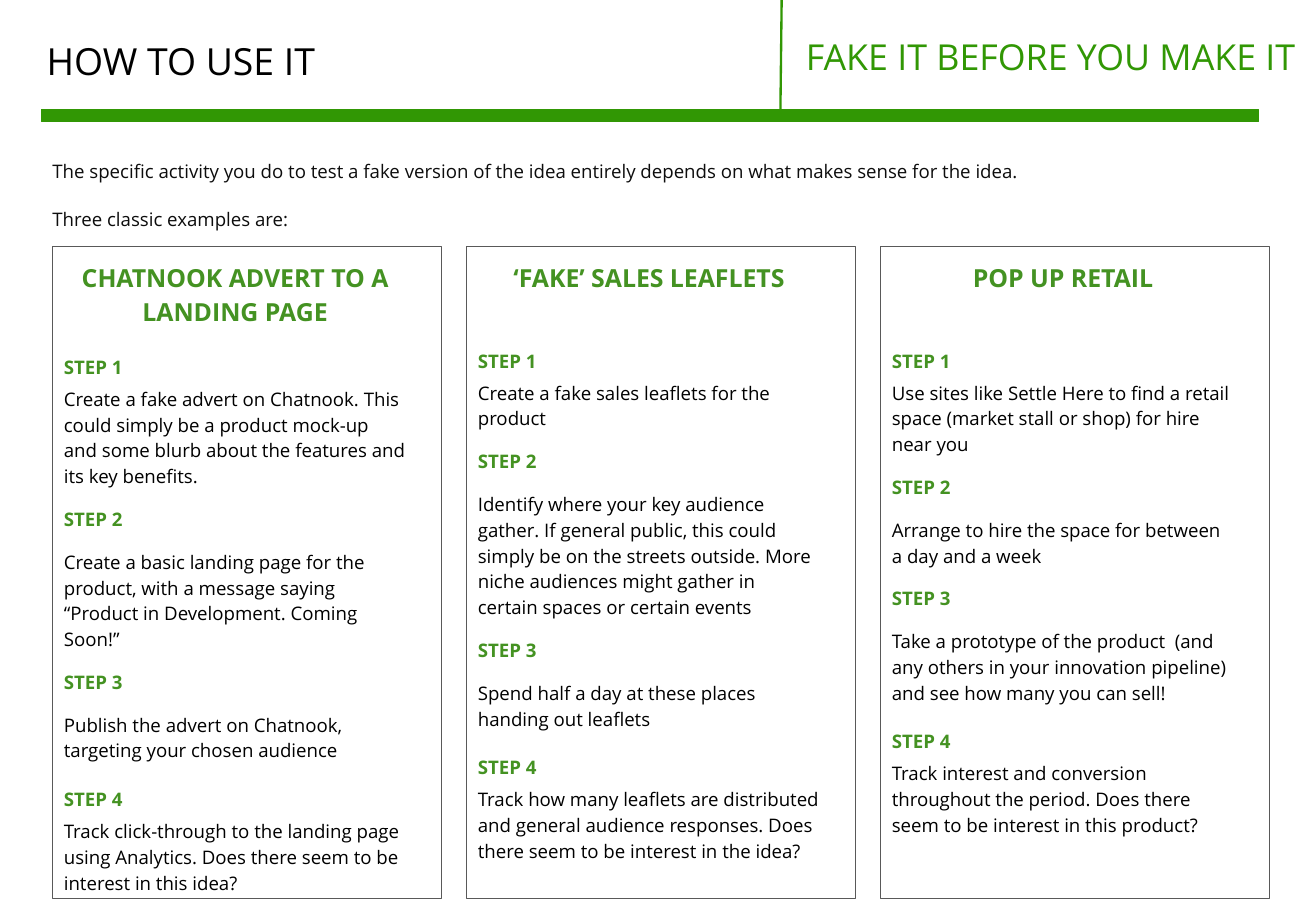
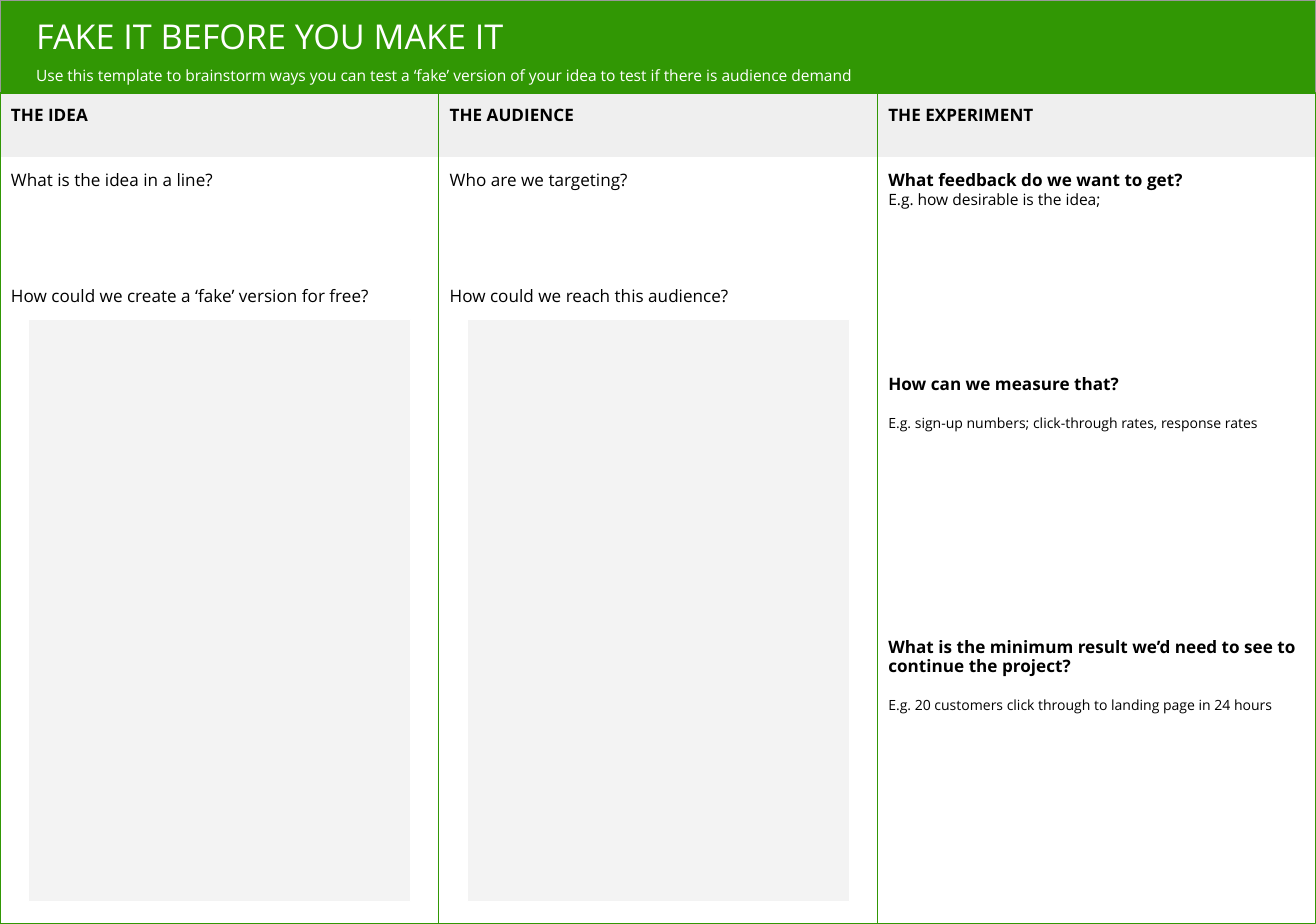
from dataclasses import dataclass

import pptx
import pptx.dml.color
import pptx.enum.shapes
import pptx.enum.text
import pptx.oxml.ns
import pptx.util
from lxml import etree

Cm, Pt = pptx.util.Cm, pptx.util.Pt
SHAPE = pptx.enum.shapes.MSO_SHAPE
CENTER = pptx.enum.text.PP_ALIGN.CENTER
TOP = pptx.enum.text.MSO_ANCHOR.TOP


@dataclass(frozen=True)
class Theme:
    font: str = "Open Sans"
    green: str = "319704"
    step_green: str = "449222"
    black: str = "000000"
    ink: str = "0D0D0D"
    white: str = "FFFFFF"
    border: str = "595959"
    banner_edge: str = "999999"
    head_fill: str = "EFEFEF"
    panel_fill: str = "F3F3F3"
    title: float = 24
    tag: float = 23
    banner: float = 22
    card_head: float = 16
    body: float = 12
    prompt: float = 11
    note: float = 10
    hint: float = 9
    inset: float = 0.25
    card_right: float = 0.79
    line: float = 0.75


T = Theme()
WIDTH, HEIGHT = 29.85, 20.96
NAME = "FAKE IT BEFORE YOU MAKE IT"

CARDS = [
    ("CHATNOOK ADVERT TO A LANDING PAGE", 2.12, [
        "Create a fake advert on Chatnook. This could simply be a product mock-up and some "
        "blurb about the features and its key benefits.",
        "Create a basic landing page for the product, with a message saying “Product in "
        "Development. Coming Soon!”",
        "Publish the advert on Chatnook, targeting your chosen audience",
        "Track click-through to the landing page using Analytics. Does there seem to be "
        "interest in this idea?"]),
    ("‘FAKE’ SALES LEAFLETS", 1.98, [
        "Create a fake sales leaflets for the product",
        "Identify where your key audience gather. If general public, this could simply be on "
        "the streets outside. More niche audiences might gather in certain spaces or certain "
        "events",
        "Spend half a day at these places handing out leaflets",
        "Track how many leaflets are distributed and general audience responses. Does there "
        "seem to be interest in the idea?"]),
    ("POP UP RETAIL", 1.98, [
        "Use sites like Settle Here to find a retail space (market stall or shop) for hire "
        "near you",
        "Arrange to hire the space for between a day and a week",
        "Take a prototype of the product  (and any others in your innovation pipeline) and "
        "see how many you can sell!",
        "Track interest and conversion throughout the period. Does there seem to be interest "
        "in this product?"]),
]

PROMPT_COLUMNS = [
    ("THE IDEA", "What is the idea in a line?",
     "How could we create a ‘fake’ version for free?"),
    ("THE AUDIENCE", "Who are we targeting?", "How could we reach this audience?"),
]

# offset from column top, question, hint, hint size, gap above the hint in points
EXPERIMENT = [
    (1.51, "What feedback do we want to get?", "E.g. how desirable is the idea;", T.note, 0.5),
    (6.14, "How can we measure that?",
     "E.g. sign-up numbers; click-through rates, response rates", T.hint, 13.5),
    (12.1, "What is the minimum result we’d need to see to continue the project?",
     "E.g. 20 customers click through to landing page in 24 hours", T.hint, 13.5),
]


def rgb(color):
    return pptx.dml.color.RGBColor.from_string(color)


def add_rect(s, x, y, w, h, fill=None, line=None):
    sp = s.shapes.add_shape(SHAPE.RECTANGLE, Cm(x), Cm(y), Cm(w), Cm(h))
    sp.shadow.inherit = False
    if fill:
        sp.fill.solid()
        sp.fill.fore_color.rgb = rgb(fill)
    else:
        sp.fill.background()
    if line:
        sp.line.color.rgb = rgb(line)
        sp.line.width = Pt(T.line)
    else:
        sp.line.fill.background()
    return sp


def prepare_frame(sp, inset=T.inset, right=None):
    tf = sp.text_frame
    tf.word_wrap = True
    tf.vertical_anchor = TOP
    tf.margin_left = tf.margin_top = tf.margin_bottom = Cm(inset)
    tf.margin_right = Cm(right or inset)
    return tf


def add_frame(s, x, y, w, h, inset=T.inset, right=None):
    return prepare_frame(s.shapes.add_textbox(Cm(x), Cm(y), Cm(w), Cm(h)), inset, right)


def add_par(tf, text, size, color=T.black, bold=False, spacing=None, before=0,
            align=pptx.enum.text.PP_ALIGN.LEFT):
    """Fill the frame's first paragraph if it is still empty, else append one."""
    p = tf.paragraphs[-1]
    if p.runs:
        p = tf.add_paragraph()
    p.alignment = align
    p.space_before = Pt(before)
    if spacing:
        p.line_spacing = spacing
    r = p.add_run()
    r.text = text
    r.font.name = T.font
    r.font.size = Pt(size)
    r.font.bold = bold
    r.font.color.rgb = rgb(color)


def add_header(s):
    add_rect(s, 0.94, 2.48, 27.61, 0.28, T.green, T.green)
    add_par(add_frame(s, 18.03, 0.53, WIDTH - 18.03, 1.5), NAME, T.tag, T.green)
    divider = s.shapes.add_connector(
        pptx.enum.shapes.MSO_CONNECTOR.STRAIGHT, Cm(17.73), Cm(0), Cm(17.7), Cm(2.64))
    divider.line.color.rgb = rgb(T.green)
    divider.line.width = Pt(1.5)
    etree.SubElement(divider._element.spPr, pptx.oxml.ns.qn("a:effectLst"))
    add_par(add_frame(s, 0.73, 0.53, 15.85, 1.9, 0.33), "HOW TO USE IT", T.title)


def add_card(s, x, y, w, h, heading, steps_top, steps):
    add_rect(s, x, y, w, h, line=T.border)
    add_par(add_frame(s, x, y, w, 1.98, right=T.card_right), heading, T.card_head,
            T.step_green, True, 1.15, align=CENTER)
    tf = add_frame(s, x, y + steps_top, w, h - steps_top, right=T.card_right)
    for number, text in enumerate(steps, 1):
        outer = number in (1, len(steps))
        add_par(tf, f"STEP {number}", T.body, T.step_green, True,
                1.2 if outer else 1.15, 14 if outer else 11)
        add_par(tf, text, T.body, spacing=1.15, before=4 if outer else 11)


def build_guide(s):
    add_header(s)
    tf = add_frame(s, 0.94, 3.27, 27.61, 2.33)
    for text in ("The specific activity you do to test a fake version of the idea entirely "
                 "depends on what makes sense for the idea.",
                 "Three classic examples are:"):
        add_par(tf, text, T.body, T.ink, spacing=1.2, before=14)
    for i, card in enumerate(CARDS):
        add_card(s, 1.2 + 9.39 * i, 5.6, 8.81, 14.78, *card)


def add_column(s, x, y, w, h, heading):
    head = add_rect(s, x, y, w, 1.45, T.head_fill)
    add_par(prepare_frame(head), heading, T.prompt, bold=True)
    add_rect(s, x, y, w, h, line=T.green)


def add_prompt_column(s, x, y, w, h, heading, first, second):
    add_column(s, x, y, w, h, heading)
    for offset, prompt in ((1.5, first), (4.13, second)):
        add_par(add_frame(s, x, y + offset, w, 0.99), prompt, T.prompt)
    add_rect(s, x + 0.65, y + 5.13, w - 1.28, h - 5.64, T.panel_fill, T.white)


def add_experiment_column(s, x, y, w, h):
    add_column(s, x, y, w, h, "THE EXPERIMENT")
    for offset, question, hint, size, gap in EXPERIMENT:
        tf = add_frame(s, x, y + offset, w, 2.4)
        add_par(tf, question, T.prompt, bold=True, spacing=0.96)
        add_par(tf, hint, size, spacing=0.96, before=gap)


def add_banner(s, x, y, w, h):
    add_rect(s, x, y, w, h, T.green, T.banner_edge)
    tf = add_frame(s, x + 0.54, y + 0.07, 20.88, h - 0.07, 0.28)
    add_par(tf, NAME, T.banner, T.white)
    add_par(tf, "Use this template to brainstorm ways you can test a ‘fake’ version of your "
            "idea to test if there is audience demand", T.note, T.white, spacing=1.5)


def build_worksheet(s):
    top, w = 2.11, WIDTH / 3
    h = HEIGHT - top
    add_banner(s, 0, 0, WIDTH, top)
    for i, column in enumerate(PROMPT_COLUMNS):
        add_prompt_column(s, w * i, top, w, h, *column)
    add_experiment_column(s, w * 2, top, w, h)


def main():
    prs = pptx.Presentation()
    prs.slide_width, prs.slide_height = Cm(WIDTH), Cm(HEIGHT)
    for build in (build_guide, build_worksheet):
        build(prs.slides.add_slide(prs.slide_layouts[6]))
    prs.save("out.pptx")


if __name__ == "__main__":
    main()
